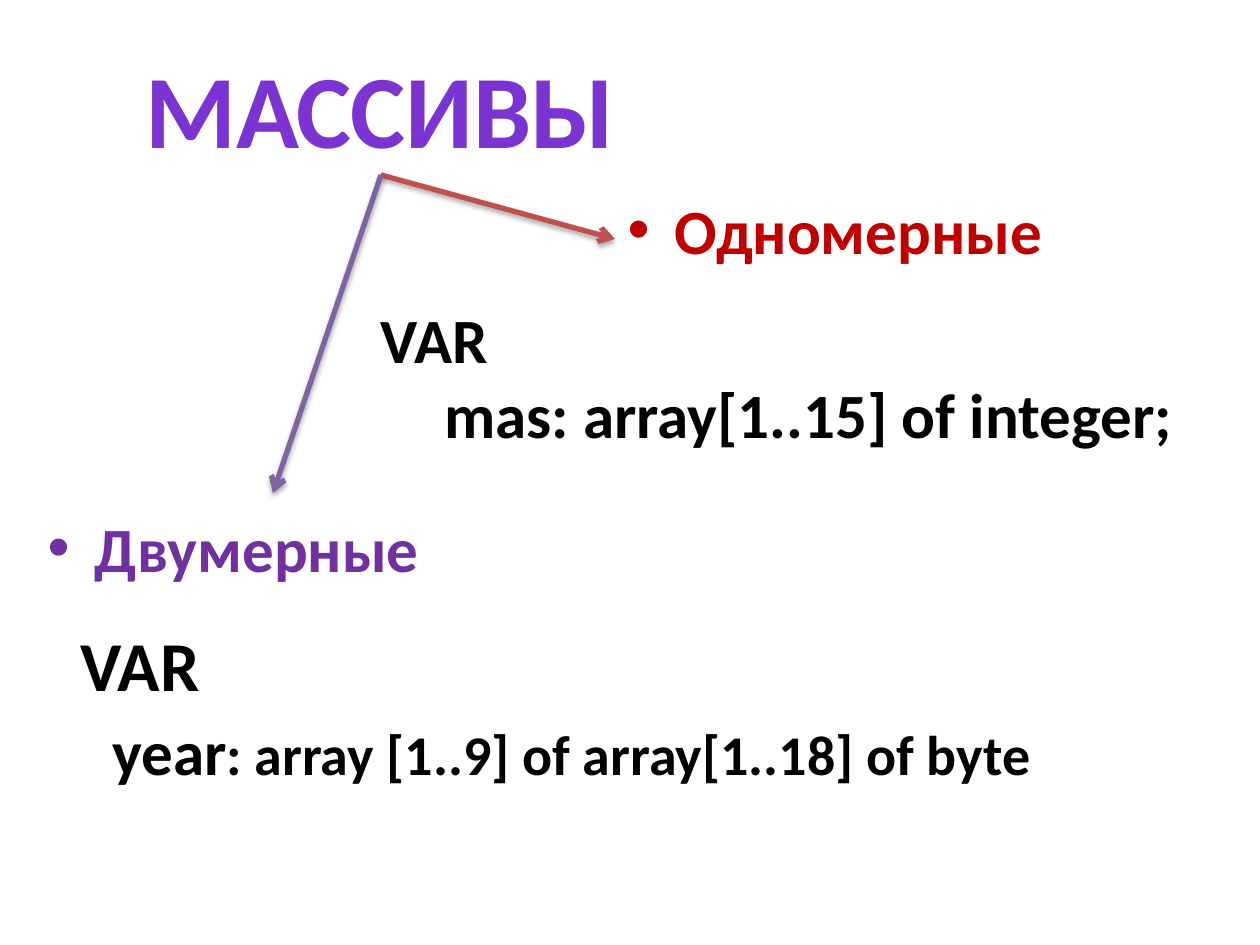
from lxml import etree
from pptx import Presentation, util as u
from pptx.dml.color import RGBColor
from pptx.enum import shapes, text
from pptx.oxml import ns

THEME = {
    "font": "Calibri",
    "title": ("7B34D2", 59.4),
    "one": ("C00000", 36),
    "two": ("7030A0", 36),
    "var": ("000000", 40),
    "code": ("000000", 36),
    "tail": ("000000", 32),
    "line": 3,
}

# Box in px: left, top, width, height
HEADS = [
    ("МАССИВЫ", "title", (74, 37, 612, 139)),
    ("Одномерные", "one", (615, 185, 591, 110)),
    ("Двумерные", "two", (35, 503, 449, 121)),
]
# Each line: left indent in px, space before in pt, runs of (words, style)
CODE = [
    ((354, 294, 853, 165), [
        (14, 0, [("VAR", "code")]),
        (78, 0, [("mas: array[1..15] of integer;", "code")]),
    ]),
    ((44, 615, 1121, 183), [
        (24, 0, [("VAR", "var")]),
        (56, 4, [("year", "code"),
                 (": array [1..9] of array[1..18] of byte", "tail")]),
    ]),
]
START = (381, 175)
ARROWS = [((615, 239), "C0504D"), ((273, 493), "8064A2")]
SHADOW = (
    '<a:effectLst xmlns:a="http://schemas.openxmlformats.org/drawingml/2006/main">'
    '<a:outerShdw blurRad="40000" dist="23000" dir="5400000" rotWithShape="0">'
    '<a:srgbClr val="000000"><a:alpha val="35000"/></a:srgbClr>'
    '</a:outerShdw></a:effectLst>'
)


def px(n):
    return u.Emu(round(n * 914400 / 126))


def place(shape, box):
    for name, n in zip(("left", "top", "width", "height"), box):
        setattr(shape, name, px(n))


def write(para, words, style):
    run = para.add_run()
    run.text = words
    color, size = THEME[style]
    form = {"name": THEME["font"], "size": u.Pt(size), "bold": True}
    for key, value in form.items():
        setattr(run.font, key, value)
    run.font.color.rgb = RGBColor.from_string(color)


def add_code(slide, box, lines):
    frame = slide.shapes.add_textbox(*map(px, box)).text_frame
    frame.word_wrap = True
    for i, (left, gap, runs) in enumerate(lines):
        para = frame.add_paragraph() if i else frame.paragraphs[0]
        para.space_before = u.Pt(gap)
        para._p.get_or_add_pPr().set("marL", str(px(left)))
        for words, style in runs:
            write(para, words, style)


def add_arrow(slide, end, color):
    arrow = slide.shapes.add_connector(
        shapes.MSO_CONNECTOR.STRAIGHT, *map(px, START + end))
    arrow.line.color.rgb = RGBColor.from_string(color)
    arrow.line.width = u.Pt(THEME["line"])
    etree.SubElement(arrow.line._get_or_add_ln(), ns.qn("a:tailEnd"), type="arrow")
    arrow._element.spPr.append(etree.fromstring(SHADOW))


def main():
    deck = Presentation()
    deck.slide_width, deck.slide_height = px(1260), px(945)
    slide = deck.slides.add_slide(deck.slide_layouts.get_by_name("Two Content"))
    for holder, (words, style, box) in zip(slide.placeholders, HEADS):
        place(holder, box)
        holder.text_frame.auto_size = text.MSO_AUTO_SIZE.NONE
        write(holder.text_frame.paragraphs[0], words, style)
    for box, lines in reversed(CODE):
        add_code(slide, box, lines)
    for end, color in ARROWS:
        add_arrow(slide, end, color)
    deck.save("out.pptx")


if __name__ == "__main__":
    main()
